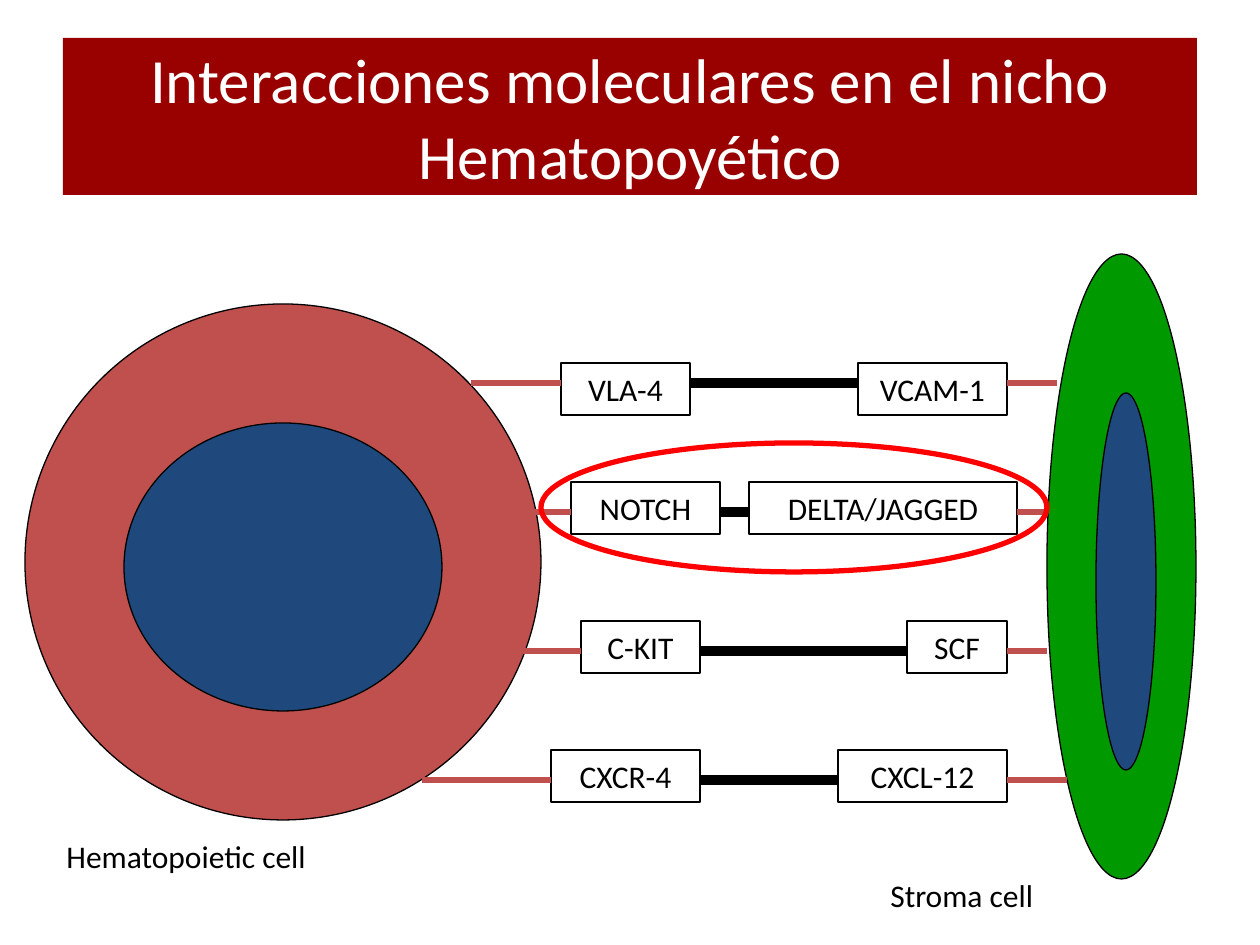
from lxml.etree import SubElement
from pptx import Presentation
from pptx.dml.color import RGBColor
from pptx.enum.shapes import MSO_CONNECTOR, MSO_SHAPE
from pptx.enum.text import MSO_ANCHOR, PP_ALIGN
from pptx.oxml.ns import qn
from pptx.util import Emu, Pt

PX_PER_INCH = 126
BOX_HEIGHT = 52
COLORS = {
    "title": "990000",
    "hematopoietic": "C0504D",
    "stroma": "009900",
    "nucleus": "1F497D",
    "highlight": "FF0000",
    "black": "000000",
    "white": "FFFFFF",
}
INTERACTIONS = [
    ("VLA-4", 561, 690, "VCAM-1", 858, 1007, 363, 383, 471, 1057),
    ("NOTCH", 571, 720, "DELTA/JAGGED", 749, 1017, 482, 512, 530, 1047),
    ("C-KIT", 581, 700, "SCF", 907, 1007, 621, 651, 520, 1047),
    ("CXCR-4", 551, 700, "CXCL-12", 838, 1007, 750, 780, 422, 1067),
]


def px(length):
    return Emu(round(length * 914400 / PX_PER_INCH))


def color(name):
    return RGBColor.from_string(COLORS[name])


def write(frame, text, size=18, ink="black", align=PP_ALIGN.CENTER):
    frame.word_wrap = True
    frame.vertical_anchor = MSO_ANCHOR.MIDDLE
    paragraph = frame.paragraphs[0]
    paragraph.alignment = align
    run = paragraph.add_run()
    run.text = text
    run.font.name = "Calibri"
    run.font.size = Pt(size)
    run.font.color.rgb = color(ink)


def add_figure(slide, preset, place, fill=None, line="black", width=0.75):
    figure = slide.shapes.add_shape(preset, *map(px, place))
    figure.shadow.inherit = False
    if fill:
        figure.fill.solid()
        figure.fill.fore_color.rgb = color(fill)
    else:
        figure.fill.background()
    if line:
        figure.line.color.rgb = color(line)
        figure.line.width = Pt(width)
    else:
        figure.line.fill.background()
    return figure


def add_ellipse(slide, place, **style):
    add_figure(slide, MSO_SHAPE.OVAL, place, **style)


def add_molecule(slide, name, left, right, top):
    place = (left, top, right - left, BOX_HEIGHT)
    write(add_figure(slide, MSO_SHAPE.RECTANGLE, place).text_frame, name)


def add_link(slide, start, end, y, ink, width):
    link = slide.shapes.add_connector(
        MSO_CONNECTOR.STRAIGHT, px(start), px(y), px(end), px(y))
    link.line.color.rgb = color(ink)
    link.line.width = Pt(width)
    SubElement(link._element.spPr, qn("a:effectLst"))


def add_interaction(slide, receptor, receptor_left, receptor_right,
                    ligand, ligand_left, ligand_right,
                    top, link_y, cell_edge, stroma_edge):
    add_molecule(slide, receptor, receptor_left, receptor_right, top)
    add_molecule(slide, ligand, ligand_left, ligand_right, top)
    add_link(slide, cell_edge, receptor_left, link_y, "hematopoietic", 3)
    add_link(slide, ligand_right, stroma_edge, link_y, "hematopoietic", 3)
    add_link(slide, receptor_right, ligand_left, link_y, "black", 6)


def add_caption(slide, text, place):
    caption = slide.shapes.add_textbox(*map(px, place))
    write(caption.text_frame, text, align=PP_ALIGN.LEFT)


def main():
    deck = Presentation()
    deck.slide_width, deck.slide_height = px(1260), px(945)
    slide = deck.slides.add_slide(deck.slide_layouts[6])

    title = add_figure(slide, MSO_SHAPE.RECTANGLE, (63, 38, 1134, 157),
                       fill="title", line=None)
    write(title.text_frame, "Interacciones moleculares en el nicho Hematopoyético",
          size=36, ink="white")

    add_ellipse(slide, (25, 304, 516, 516), fill="hematopoietic")
    add_ellipse(slide, (1047, 254, 149, 625), fill="stroma")
    for interaction in INTERACTIONS:
        add_interaction(slide, *interaction)
    add_ellipse(slide, (124, 423, 318, 288), fill="nucleus")
    add_ellipse(slide, (1096, 393, 60, 377), fill="nucleus")

    add_caption(slide, "Hematopoietic cell", (54, 831, 387, 50))
    add_caption(slide, "Stroma cell", (878, 870, 238, 50))
    add_ellipse(slide, (541, 443, 506, 129), line="highlight", width=3)

    deck.save("out.pptx")


if __name__ == "__main__":
    main()
